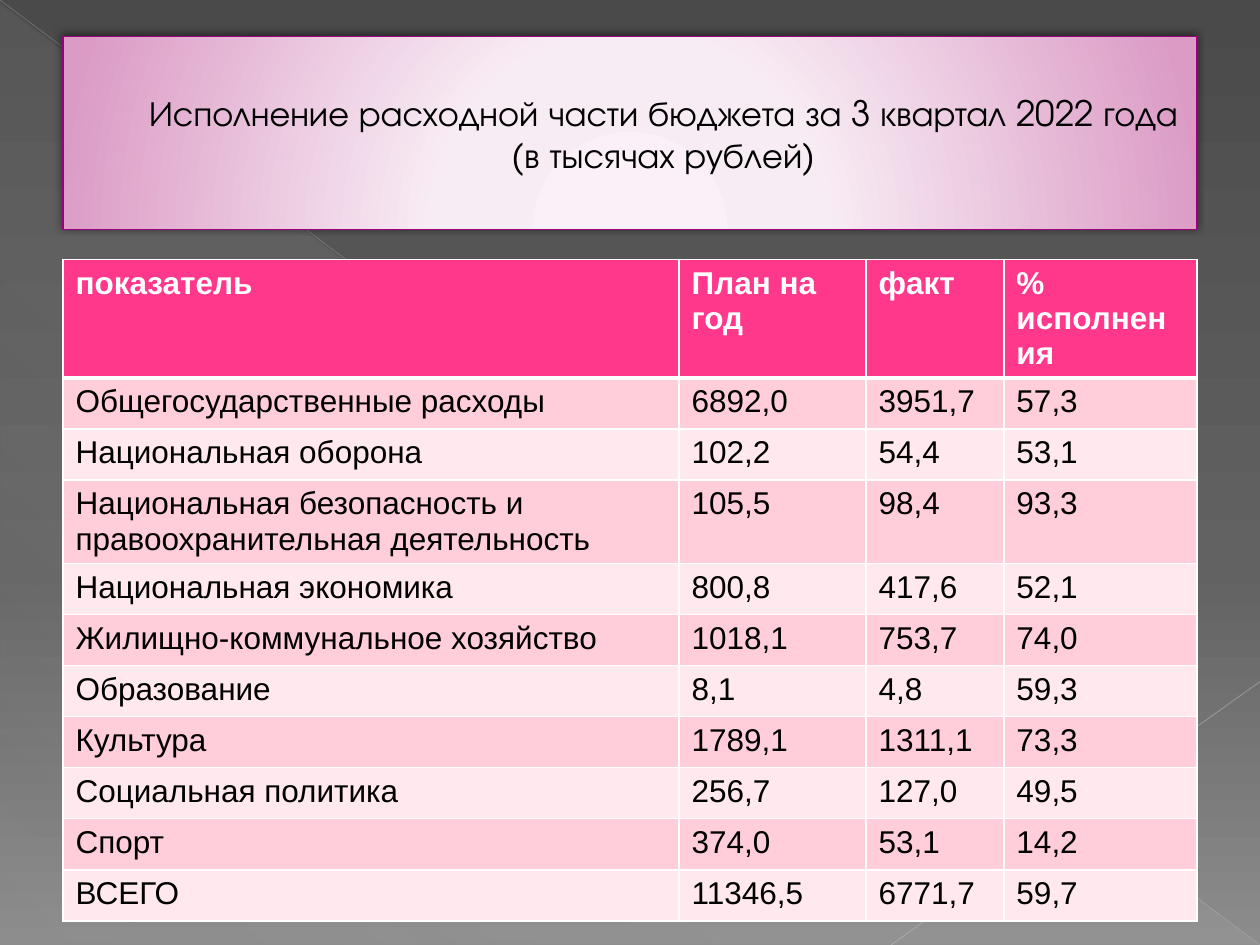
from dataclasses import dataclass

from lxml import etree
from pptx import Presentation
from pptx.dml.color import RGBColor
from pptx.enum.shapes import MSO_CONNECTOR, MSO_SHAPE
from pptx.enum.text import MSO_ANCHOR, PP_ALIGN
from pptx.oxml import parse_xml
from pptx.oxml.ns import nsdecls, qn
from pptx.util import Cm, Pt

LINE = MSO_CONNECTOR.STRAIGHT
RECT, TRIANGLE = MSO_SHAPE.RECTANGLE, MSO_SHAPE.RIGHT_TRIANGLE
MIDDLE, CENTER = MSO_ANCHOR.MIDDLE, PP_ALIGN.CENTER


@dataclass(frozen=True)
class Theme:
    title_font: str = "TeX Gyre Adventor"
    body_font: str = "Arial"
    title_size: int = 20
    body_size: int = 18
    text: str = "000000"
    white: str = "FFFFFF"
    header: str = "FF388C"
    bands: tuple = ("FFCEDA", "FFE8EE")
    title_line: str = "9C007F"
    # Gradient stops: position %, colour, opacity %
    title_stops: tuple = ((0, "FBF0F7", 100), (34, "F8ECF4", 100), (100, "DB9BC5", 100))
    back_stops: tuple = ((0, "4A4A4A", 100), (60, "626262", 100), (100, "8C8C8C", 100))
    sheen_stops: tuple = ((0, "D2D2D2", 10), (70, "D2D2D2", 8), (100, "D2D2D2", 1))


THEME = Theme()
W, H = 25.4, 19.05
MARGIN = 1.27
LINEAR = '<a:lin ang="{}" scaled="0"/>'
GLOW = '<a:path path="circle"><a:fillToRect l="50000" t="155000" r="50000" b="-55000"/></a:path>'

TITLE = "Исполнение расходной части бюджета за 3 квартал 2022 года (в тысячах рублей)"
COL_WIDTHS = (12.42, 3.77, 2.78, 3.89)
ROW_HEIGHT = 1.03
HEADER_HEIGHT = 2.36
ROWS = (
    ("показатель", "План на год", "факт", "% исполнения"),
    ("Общегосударственные расходы", "6892,0", "3951,7", "57,3"),
    ("Национальная оборона", "102,2", "54,4", "53,1"),
    ("Национальная безопасность и правоохранительная деятельность", "105,5", "98,4", "93,3"),
    ("Национальная экономика", "800,8", "417,6", "52,1"),
    ("Жилищно-коммунальное хозяйство", "1018,1", "753,7", "74,0"),
    ("Образование", "8,1", "4,8", "59,3"),
    ("Культура", "1789,1", "1311,1", "73,3"),
    ("Социальная политика", "256,7", "127,0", "49,5"),
    ("Спорт", "374,0", "53,1", "14,2"),
    ("ВСЕГО", "11346,5", "6771,7", "59,7"),
)


def rgb(color):
    return RGBColor.from_string(color)


def set_gradient(fill, owner, stops, direction):
    """Give fill, which belongs to the XML element owner, the stops and direction."""
    fill.gradient()
    grad = next(owner.iter(qn("a:gradFill")))
    marks = "".join(
        f'<a:gs pos="{pos * 1000}"><a:srgbClr val="{color}">'
        f'<a:alpha val="{alpha * 1000}"/></a:srgbClr></a:gs>'
        for pos, color, alpha in stops
    )
    new = parse_xml(
        f'<a:gradFill {nsdecls("a")} rotWithShape="1"><a:gsLst>{marks}</a:gsLst>{direction}</a:gradFill>'
    )
    grad.getparent().replace(grad, new)


def add_run(p, text, font, size, color, bold=False):
    r = p.add_run()
    r.text = text
    r.font.name, r.font.size, r.font.bold = font, Pt(size), bold
    r.font.color.rgb = rgb(color)


def add_faint_line(slide, start, end, color, width, alpha):
    line = slide.shapes.add_connector(LINE, *map(Cm, start + end))
    line.line.color.rgb = rgb(color)
    line.line.width = Pt(width)
    sp_pr = line._element.spPr
    etree.SubElement(next(sp_pr.iter(qn("a:srgbClr"))), qn("a:alpha"), val=str(alpha * 1000))
    etree.SubElement(sp_pr, qn("a:effectLst"))


def add_backdrop(slide, width, height):
    set_gradient(slide.background.fill, slide._element, THEME.back_stops, LINEAR.format(90 * 60000))
    sp = slide.shapes.add_shape(TRIANGLE, 0, Cm(0.05), Cm(width), Cm(height - 0.05))
    sp.shadow.inherit = False
    sp.line.fill.background()
    set_gradient(sp.fill, sp._element.spPr, THEME.sheen_stops, LINEAR.format(133 * 60000))
    add_faint_line(slide, (0, 0), (width, height), "BFBFBF", 0.39, 35)
    add_faint_line(slide, (width, 13.74), (17.96, height), "C6C6C6", 0.47, 45)


def add_title(slide, left, top, width, height):
    sp = slide.shapes.add_shape(RECT, Cm(left), Cm(top), Cm(width), Cm(height))
    set_gradient(sp.fill, sp._element.spPr, THEME.title_stops, GLOW)
    sp.line.color.rgb = rgb(THEME.title_line)
    sp.line.width = Pt(0.75)
    sp.shadow.inherit = False
    sp._element.spPr.find(qn("a:effectLst")).append(parse_xml(
        f'<a:outerShdw {nsdecls("a")} blurRad="{Pt(5)}" dist="{Pt(2)}" dir="{245 * 60000}" '
        'rotWithShape="0"><a:srgbClr val="000000"><a:alpha val="50000"/></a:srgbClr></a:outerShdw>'
    ))
    tf = sp.text_frame
    tf.word_wrap = True
    tf.vertical_anchor = MIDDLE
    p = tf.paragraphs[0]
    p.alignment = CENTER
    p._p.get_or_add_pPr().set("marL", str(Cm(1.35)))
    add_run(p, TITLE, THEME.title_font, THEME.title_size, THEME.text)


def set_borders(cell, top, bottom):
    tc_pr = cell._tc.get_or_add_tcPr()
    for i, (side, width) in enumerate((("L", 1), ("R", 1), ("T", top), ("B", bottom))):
        tc_pr.insert(i, parse_xml(
            f'<a:ln{side} {nsdecls("a")} w="{Pt(width)}"><a:solidFill>'
            f'<a:srgbClr val="{THEME.white}"/></a:solidFill></a:ln{side}>'
        ))


def add_budget_table(slide, left, top, width):
    height = HEADER_HEIGHT + ROW_HEIGHT * (len(ROWS) - 1)
    table = slide.shapes.add_table(
        len(ROWS), len(COL_WIDTHS), Cm(left), Cm(top), Cm(width), Cm(height)
    ).table
    for col, share in zip(table.columns, COL_WIDTHS):
        col.width = Cm(width * share / sum(COL_WIDTHS))
    for i, values in enumerate(ROWS):
        is_header = i == 0
        table.rows[i].height = Cm(HEADER_HEIGHT if is_header else ROW_HEIGHT)
        fill = THEME.header if is_header else THEME.bands[(i - 1) % 2]
        color = THEME.white if is_header else THEME.text
        for cell, value in zip(table.rows[i].cells, values):
            cell.fill.solid()
            cell.fill.fore_color.rgb = rgb(fill)
            set_borders(cell, top=3 if i == 1 else 1, bottom=3 if is_header else 1)
            add_run(cell.text_frame.paragraphs[0], value, THEME.body_font,
                    THEME.body_size, color, is_header)


def main():
    prs = Presentation()
    prs.slide_width, prs.slide_height = Cm(W), Cm(H)
    slide = prs.slides.add_slide(prs.slide_layouts[6])
    add_backdrop(slide, W, H)
    add_title(slide, MARGIN, 0.74, W - 2 * MARGIN, 3.89)
    add_budget_table(slide, MARGIN, 5.23, W - 2 * MARGIN)
    prs.save("out.pptx")


if __name__ == "__main__":
    main()
